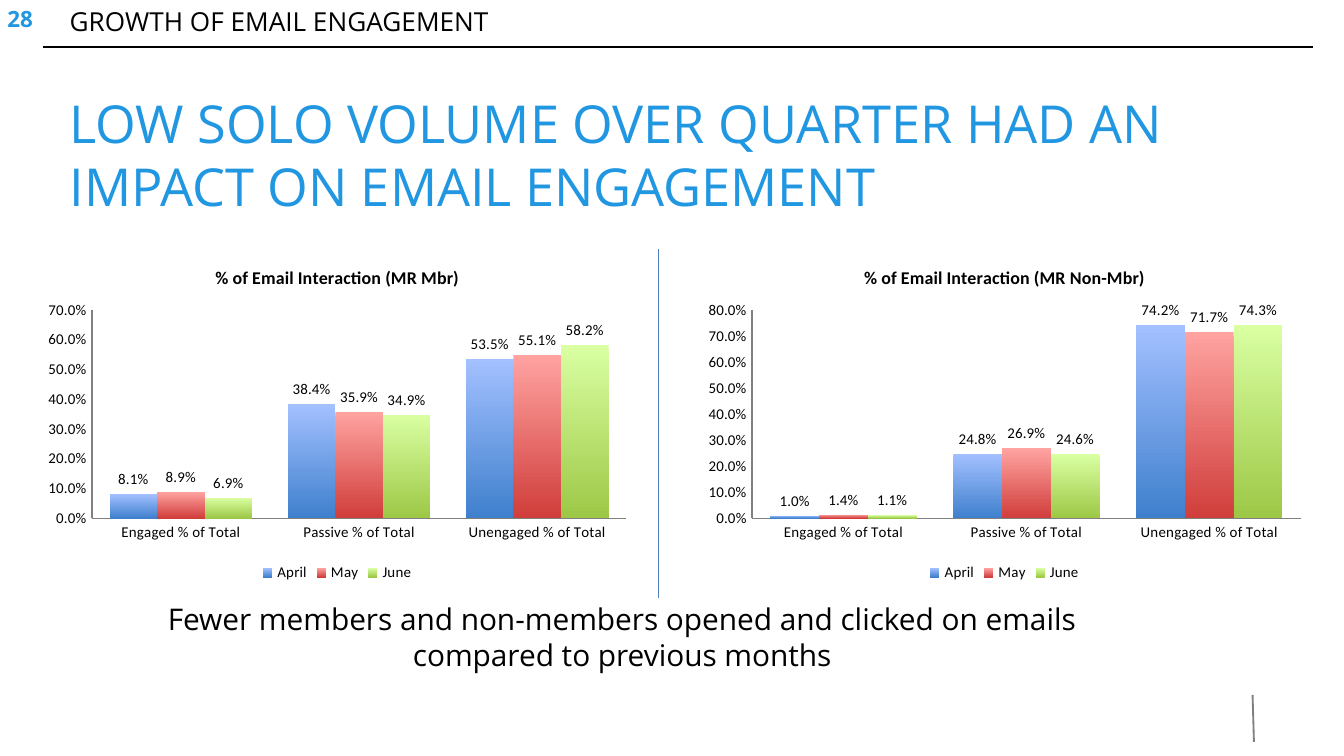
"""Build the email engagement slide with two column charts."""
from lxml import etree
from pptx import Presentation
from pptx.chart.data import CategoryChartData
from pptx.dml.color import RGBColor
from pptx.enum.chart import XL_CHART_TYPE, XL_LABEL_POSITION, XL_LEGEND_POSITION, XL_TICK_MARK
from pptx.enum.shapes import MSO_CONNECTOR
from pptx.enum.text import MSO_ANCHOR, PP_ALIGN
from pptx.oxml.ns import qn
from pptx.util import Inches, Pt

COLUMN = XL_CHART_TYPE.COLUMN_CLUSTERED
OUTSIDE = XL_LABEL_POSITION.OUTSIDE_END
BOTTOM = XL_LEGEND_POSITION.BOTTOM
NO_TICK = XL_TICK_MARK.NONE
STRAIGHT = MSO_CONNECTOR.STRAIGHT
TOP, MIDDLE = MSO_ANCHOR.TOP, MSO_ANCHOR.MIDDLE
LEFT, CENTER = PP_ALIGN.LEFT, PP_ALIGN.CENTER

COLORS = {
    "black": "000000", "gray": "808080", "blue": "2196E1", "rule": "4F81BD",
    "April": ("A3C0FF", "3F80CD"),
    "May": ("FFA3A1", "D03E3B"),
    "June": ("D9FFA2", "9DC846"),
}


def style(font, **values):
    color = values.pop("color", "black")
    for name, value in values.items():
        setattr(font, name, value)
    font.color.rgb = RGBColor.from_string(COLORS[color])


deck = Presentation()
deck.slide_width = Inches(10)
deck.slide_height = Inches(10 * 9 / 16)
slide = deck.slides.add_slide(deck.slide_layouts[6])
shapes = slide.shapes

lines = [
    (0.32, 0.35, 9.77, 0.35, "black", 0.75),
    (9.32, 5.17, 9.33, 5.52, "gray", 1),
    (4.9, 1.85, 4.9, 4.45, "rule", 0.25),
]
for *ends, color, width in lines:
    line = shapes.add_connector(STRAIGHT, *[Inches(end) for end in ends])
    line.line.color.rgb = RGBColor.from_string(COLORS[color])
    line.line.width = Pt(width)
    etree.SubElement(line.element.spPr, qn("a:effectLst"))

texts = [
    ("GROWTH OF EMAIL ENGAGEMENT", (0.42, -0.01, 7.65, 0.35), 14, "black", False, LEFT, TOP),
    ("28", (-0.15, -0.05, 0.6, 0.38), 12, "blue", True, CENTER, MIDDLE),
    ("LOW SOLO VOLUME OVER QUARTER HAD AN IMPACT ON EMAIL ENGAGEMENT",
     (0.42, 0.63, 9.35, 0.61), 28, "blue", False, LEFT, TOP),
    ("Fewer members and non-members opened and clicked on emails compared to previous months",
     (0.99, 4.42, 7.28, 0.64), 16, "black", False, CENTER, TOP),
]
for words, place, size, color, bold, align, anchor in texts:
    frame = shapes.add_textbox(*[Inches(side) for side in place]).text_frame
    frame.word_wrap = True
    frame.vertical_anchor = anchor
    para = frame.paragraphs[0]
    para.alignment = align
    run = para.add_run()
    run.text = words
    style(run.font, name="Open Sans", size=Pt(size), bold=bold, color=color)

charts = [
    ("% of Email Interaction (MR Mbr)", 0.27, 4.48, 0.7, {
        "April": (0.081, 0.384, 0.535),
        "May": (0.089, 0.359, 0.551),
        "June": (0.069, 0.349, 0.582)}),
    ("% of Email Interaction (MR Non-Mbr)", 5.18, 4.59, 0.8, {
        "April": (0.01, 0.248, 0.742),
        "May": (0.014, 0.269, 0.717),
        "June": (0.011, 0.246, 0.743)}),
]
for title, left, width, peak, months in charts:
    data = CategoryChartData(number_format="0.0%")
    data.categories = [f"{kind} % of Total" for kind in ("Engaged", "Passive", "Unengaged")]
    for month, values in months.items():
        data.add_series(month, values)
    chart = shapes.add_chart(
        COLUMN, Inches(left), Inches(1.85), Inches(width), Inches(2.52), data).chart
    style(chart.font, name="Calibri", size=Pt(8))

    chart.has_title = True
    head = chart.chart_title.text_frame
    head.text = title
    style(head.paragraphs[0].runs[0].font, name="Calibri", size=Pt(9.6), bold=True)
    chart.chart_title.include_in_layout = False
    chart.has_legend = True
    chart.legend.position = BOTTOM
    chart.legend.include_in_layout = False

    for axis in (chart.category_axis, chart.value_axis):
        axis.major_tick_mark = axis.minor_tick_mark = NO_TICK
        axis.has_major_gridlines = False
        axis.format.line.color.rgb = RGBColor.from_string(COLORS["gray"])
        axis.format.line.width = Pt(0.75)
    scale = chart.value_axis
    scale.minimum_scale, scale.maximum_scale, scale.major_unit = 0, peak, 0.1
    scale.tick_labels.number_format = "0.0%"
    scale.tick_labels.number_format_is_linked = False

    plot = chart.plots[0]
    plot.gap_width, plot.overlap = 75, 0
    plot.vary_by_categories = False
    for series in plot.series:
        series.invert_if_negative = False
        fill = series.format.fill
        fill.gradient()
        fill.gradient_angle = 270
        for stop, shade in zip(fill.gradient_stops, COLORS[series.name]):
            stop.color.rgb = RGBColor.from_string(shade)
        labels = series.data_labels
        labels.show_value = True
        labels.position = OUTSIDE
        labels.number_format = "0.0%"
        labels.number_format_is_linked = False

deck.save("out.pptx")
